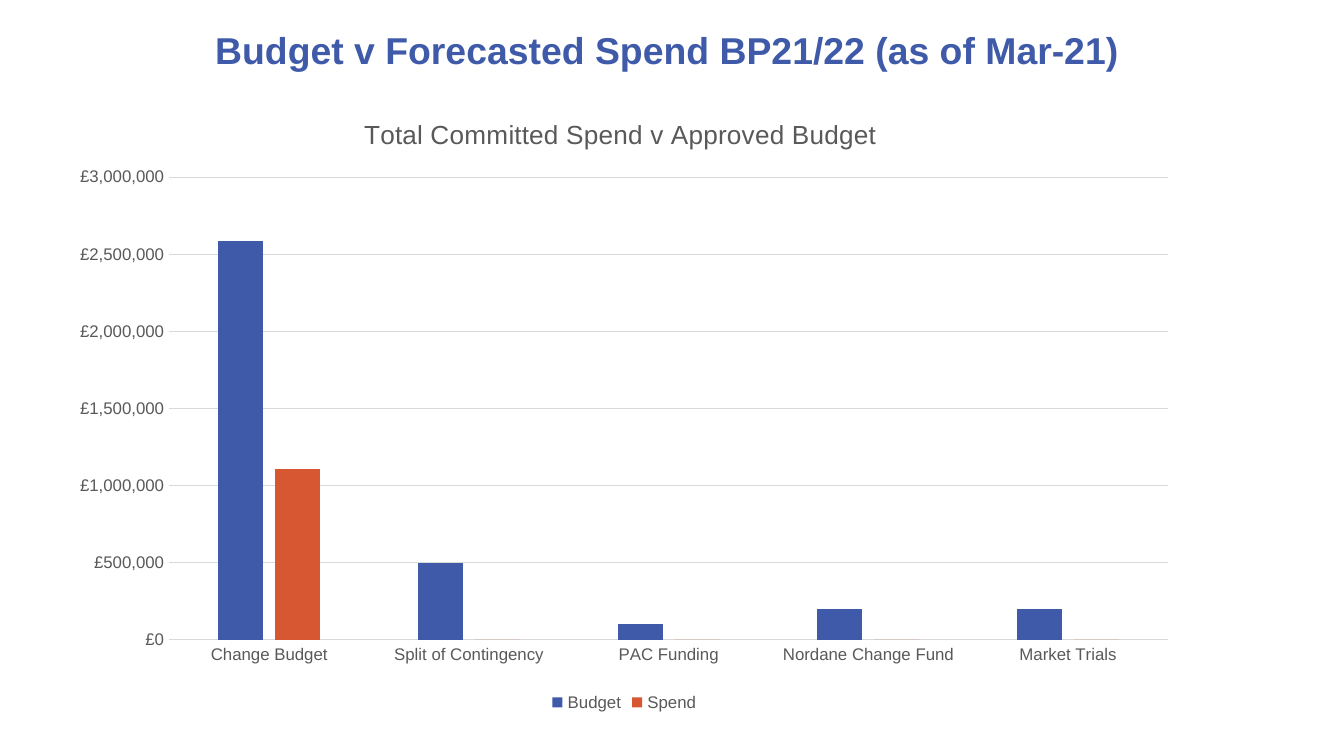
from pptx import Presentation
from pptx.chart.data import CategoryChartData
from pptx.dml.color import RGBColor
from pptx.enum.chart import XL_CHART_TYPE as ChartType, XL_LEGEND_POSITION as LegendPosition
from pptx.enum.chart import XL_TICK_MARK as TickMark
from pptx.enum.text import MSO_ANCHOR as Anchor, PP_ALIGN as Align
from pptx.oxml import parse_xml
from pptx.oxml.ns import nsdecls, qn
from pptx.util import Inches, Pt

BLUE = RGBColor(0x3E, 0x5A, 0xA8)
ORANGE = RGBColor(0xD7, 0x57, 0x33)
TEXT_GREY = RGBColor(0x59, 0x59, 0x59)
GRID_GREY = RGBColor(0xD9, 0xD9, 0xD9)

TITLE_FORMAT = {"name": "Arial", "size": Pt(20), "bold": True}
CHART_TITLE_FORMAT = {"name": "Arial", "size": Pt(14), "bold": False}
LABEL_FORMAT = {"name": "Arial", "size": Pt(9), "bold": False}

CATEGORIES = ["Change Budget", "Split of Contingency", "PAC Funding",
              "Nordane Change Fund", "Market Trials"]
SERIES = [
    ("Budget", [2590000, 500000, 100000, 200000, 200000], BLUE),
    ("Spend", [1110000, 0, 0, 0, 0], ORANGE),
]
CHART_WIDTH, CHART_HEIGHT = 8.43, 4.65
PLOT_LAYOUT = {"x": 0.83 / CHART_WIDTH, "y": 0.63 / CHART_HEIGHT,
               "w": 7.43 / CHART_WIDTH, "h": 3.44 / CHART_HEIGHT}


def format_font(font, values, color):
    for name, value in values.items():
        setattr(font, name, value)
    font.color.rgb = color


def format_line(line):
    line.color.rgb = GRID_GREY
    line.width = Pt(0.75)


def add_title(slide, text):
    title = slide.shapes.title
    title.left, title.top = Inches(0.14), Inches(0.14)
    title.width, title.height = Inches(9.65), Inches(0.45)
    frame = title.text_frame
    frame.word_wrap = True
    frame.vertical_anchor = Anchor.MIDDLE
    para = frame.paragraphs[0]
    para.alignment = Align.CENTER
    span = para.add_run()
    span.text = text
    format_font(span.font, TITLE_FORMAT, BLUE)


def place_plot(chart):
    """Fix the inner plot area as fractions of the chart frame."""
    plot_area = chart.element.find(".//" + qn("c:plotArea"))
    for layout in plot_area.findall(qn("c:layout")):
        plot_area.remove(layout)
    sizes = "".join(f'<c:{key} val="{value:.4f}"/>' for key, value in PLOT_LAYOUT.items())
    plot_area.insert(0, parse_xml(
        f'<c:layout {nsdecls("c")}><c:manualLayout><c:layoutTarget val="inner"/>'
        f'<c:xMode val="edge"/><c:yMode val="edge"/>{sizes}</c:manualLayout></c:layout>'))


def format_axes(chart):
    for axis in (chart.category_axis, chart.value_axis):
        axis.major_tick_mark = axis.minor_tick_mark = TickMark.NONE
        format_font(axis.tick_labels.font, LABEL_FORMAT, TEXT_GREY)
    format_line(chart.category_axis.format.line)

    values = chart.value_axis
    values.minimum_scale, values.maximum_scale = 0, 3000000
    values.major_unit = 500000
    values.format.line.fill.background()
    values.has_major_gridlines = True
    format_line(values.major_gridlines.format.line)
    values.tick_labels.number_format = '"£"#,##0'
    values.tick_labels.number_format_is_linked = False


def add_chart_title(chart, text):
    chart.has_title = True
    chart.chart_title.include_in_layout = False
    span = chart.chart_title.text_frame.paragraphs[0].add_run()
    span.text = text
    format_font(span.font, CHART_TITLE_FORMAT, TEXT_GREY)


def add_legend(chart):
    chart.has_legend = True
    chart.legend.position = LegendPosition.BOTTOM
    chart.legend.include_in_layout = False
    format_font(chart.legend.font, LABEL_FORMAT, TEXT_GREY)


def add_spend_chart(slide):
    data = CategoryChartData(number_format='"£"#,##0')
    data.categories = CATEGORIES
    for name, values, _ in SERIES:
        data.add_series(name, values)
    chart = slide.shapes.add_chart(ChartType.COLUMN_CLUSTERED, Inches(0.43), Inches(0.69),
                                   Inches(CHART_WIDTH), Inches(CHART_HEIGHT), data).chart
    chart.font.name, chart.font.size = "Arial", Pt(10)

    plot = chart.plots[0]
    plot.gap_width, plot.overlap = 219, -27
    plot.vary_by_categories = False
    for series, (_, _, color) in zip(plot.series, SERIES):
        series.format.fill.solid()
        series.format.fill.fore_color.rgb = color

    add_chart_title(chart, "Total Committed Spend v Approved Budget ")
    format_axes(chart)
    add_legend(chart)
    place_plot(chart)


def main():
    deck = Presentation()
    deck.slide_width = Inches(10)
    deck.slide_height = deck.slide_width * 9 // 16
    slide = deck.slides.add_slide(deck.slide_layouts[5])
    add_title(slide, "Budget v Forecasted Spend BP21/22 (as of Mar-21)")
    add_spend_chart(slide)
    deck.save("out.pptx")


if __name__ == "__main__":
    main()
